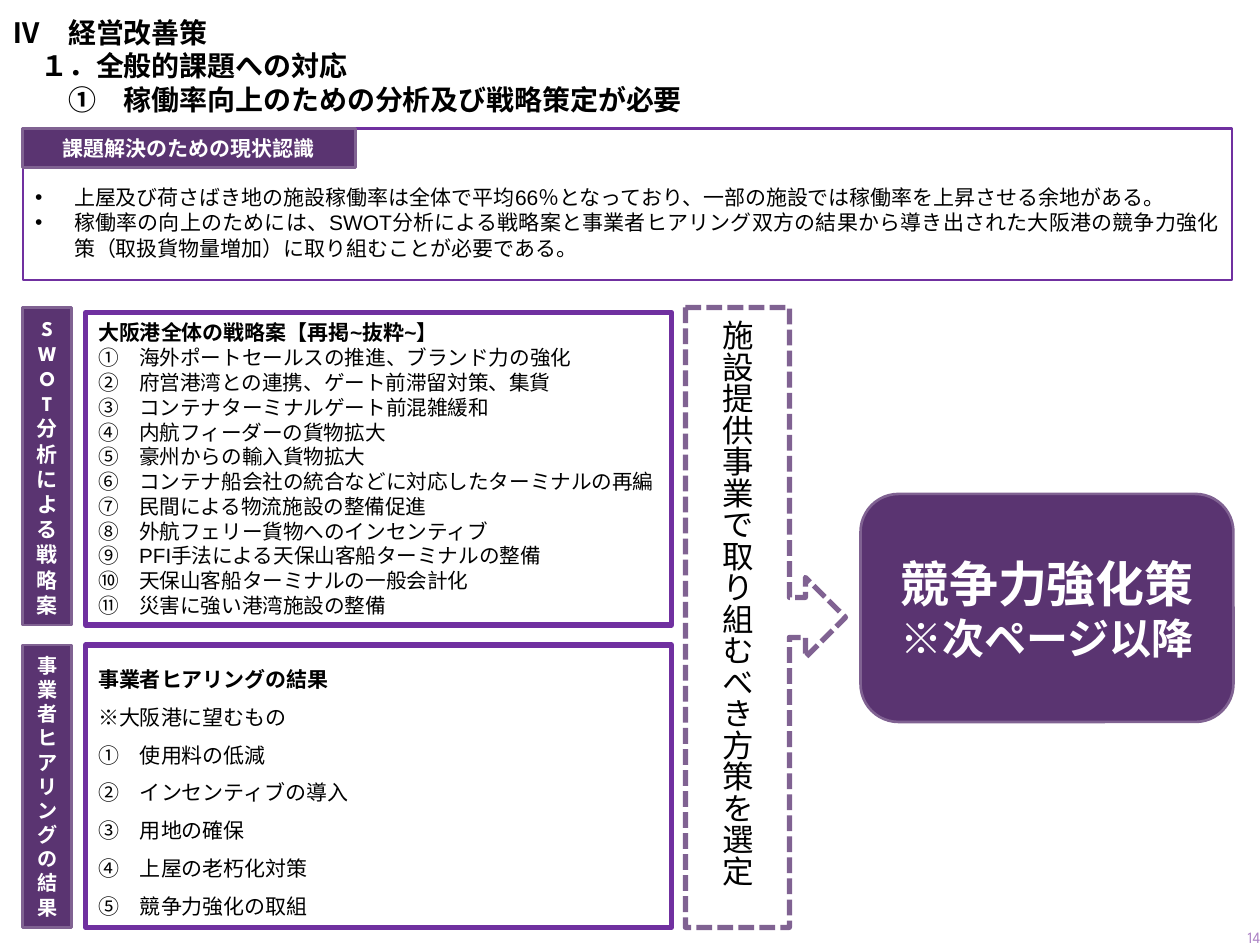
from lxml.etree import SubElement
from pptx import Presentation
from pptx.dml.color import RGBColor
from pptx.enum.dml import MSO_LINE
from pptx.enum.shapes import MSO_SHAPE
from pptx.enum.text import MSO_ANCHOR, PP_ALIGN
from pptx.oxml.ns import qn
from pptx.util import Inches, Pt

PURPLE, BORDER, FRAME = "5A3471", "806292", "7030A0"
BLACK, WHITE, PAGE_COLOR = "000000", "FFFFFF", "AD84C6"
BODY_FONT, LABEL_FONT = "Arial", "League Spartan"
NUMBERS = "①②③④⑤⑥⑦⑧⑨⑩⑪"

LEFT, LABEL_WIDTH = 0.18, 0.39
PANEL_LEFT, PANEL_WIDTH = 0.68, 4.65
HEARING_TOP, HEARING_HEIGHT = 5.12, 2.24

TITLE = ("Ⅳ　経営改善策\n"
         "　１．全般的課題への対応\n"
         "　　①　稼働率向上のための分析及び戦略策定が必要")
SITUATION = [
    "上屋及び荷さばき地の施設稼働率は全体で平均66％となっており、一部の施設では稼働率を上昇させる余地がある。",
    "稼働率の向上のためには、SWOT分析による戦略案と事業者ヒアリング双方の結果から導き出された"
    "大阪港の競争力強化策（取扱貨物量増加）に取り組むことが必要である。",
]
STRATEGIES = [
    "海外ポートセールスの推進、ブランド力の強化",
    "府営港湾との連携、ゲート前滞留対策、集貨",
    "コンテナターミナルゲート前混雑緩和",
    "内航フィーダーの貨物拡大",
    "豪州からの輸入貨物拡大",
    "コンテナ船会社の統合などに対応したターミナルの再編",
    "民間による物流施設の整備促進",
    "外航フェリー貨物へのインセンティブ",
    "PFI手法による天保山客船ターミナルの整備",
    "天保山客船ターミナルの一般会計化",
    "災害に強い港湾施設の整備",
]
REQUESTS = ["使用料の低減", "インセンティブの導入", "用地の確保", "上屋の老朽化対策", "競争力強化の取組"]


def color(hex_string):
    return RGBColor.from_string(hex_string)


def numbered(items):
    return [f"{number}　{item}" for number, item in zip(NUMBERS, items)]


def add_box(slide, kind, left, top, width, height, fill=None, line=BORDER, weight=1.5):
    box = slide.shapes.add_shape(kind, Inches(left), Inches(top), Inches(width), Inches(height))
    box.shadow.inherit = False
    if fill:
        box.fill.solid()
        box.fill.fore_color.rgb = color(fill)
    else:
        box.fill.background()
    box.line.color.rgb = color(line)
    box.line.width = Pt(weight)
    box.text_frame.word_wrap = True
    box.text_frame.vertical_anchor = MSO_ANCHOR.MIDDLE
    return box


def write(frame, lines, size, font=BODY_FONT, ink=BLACK, bold=False,
          align=PP_ALIGN.JUSTIFY, spacing=None):
    """Fill the frame with one paragraph per line and return the paragraphs."""
    for index, line in enumerate(lines):
        paragraph = frame.add_paragraph() if index else frame.paragraphs[0]
        paragraph.text = line
        paragraph.alignment = align
        paragraph.line_spacing = spacing
        paragraph.font.name = font
        paragraph.font.size = Pt(size)
        paragraph.font.bold = bold
        paragraph.font.color.rgb = color(ink)
    return frame.paragraphs


def add_bullet(paragraph, indent):
    properties = paragraph._p.get_or_add_pPr()
    properties.set("marL", str(Inches(indent)))
    properties.set("indent", str(-Inches(indent)))
    SubElement(properties, qn("a:buFont"), typeface="Arial")
    SubElement(properties, qn("a:buChar"), char="•")


def add_text(slide, left, top, width, height, line, size, anchor, **style):
    frame = slide.shapes.add_textbox(
        Inches(left), Inches(top), Inches(width), Inches(height)).text_frame
    frame.word_wrap = True
    frame.vertical_anchor = anchor
    write(frame, [line], size, **style)


def add_label(slide, left, top, width, height, text, size, kind=MSO_SHAPE.RECTANGLE):
    label = add_box(slide, kind, left, top, width, height, fill=PURPLE)
    return write(label.text_frame, text.split("\n"), size, LABEL_FONT, WHITE,
                 bold=True, align=PP_ALIGN.CENTER)


def add_panel(slide, top, height, heading, items, size, spacing=None):
    panel = add_box(slide, MSO_SHAPE.RECTANGLE, PANEL_LEFT, top, PANEL_WIDTH, height,
                    line=FRAME, weight=3)
    paragraphs = write(panel.text_frame, [heading] + items, size, spacing=spacing)
    paragraphs[0].font.size = Pt(12)
    paragraphs[0].font.bold = True


def add_situation(slide):
    situation = add_box(slide, MSO_SHAPE.RECTANGLE, LEFT, 1.02, 9.6, 1.2, line=FRAME, weight=1.25)
    # Keep the text clear of the heading tab
    situation.text_frame.margin_top = Inches(0.34)
    for paragraph in write(situation.text_frame, SITUATION, 12):
        add_bullet(paragraph, 0.31)
    add_label(slide, LEFT, 1.02, 2.64, 0.31, "課題解決のための現状認識", 12)


def add_selection_arrow(slide):
    arrow = add_box(slide, MSO_SHAPE.RIGHT_ARROW_CALLOUT, 5.44, 2.44, 1.27, 4.92, weight=3)
    arrow.line.dash_style = MSO_LINE.SQUARE_DOT
    arrow.text_frame._txBody.bodyPr.set("vert", "eaVert")
    write(arrow.text_frame, ["施設提供事業で取り組むべき方策を選定"], 18, LABEL_FONT,
          align=PP_ALIGN.CENTER)


def main():
    presentation = Presentation()
    presentation.slide_width, presentation.slide_height = Inches(10), Inches(7.5)
    slide = presentation.slides.add_slide(presentation.slide_layouts[6])

    # Title and current situation
    add_text(slide, 0, 0.07, 8.62, 1.11, TITLE, 16, MSO_ANCHOR.TOP,
             bold=True, align=PP_ALIGN.LEFT)
    add_situation(slide)

    # SWOT strategies
    add_label(slide, LEFT, 2.44, LABEL_WIDTH, 2.52, "SWOT分析による戦略案", 12)
    add_panel(slide, 2.48, 2.48, "大阪港全体の戦略案【再掲~抜粋~】", numbered(STRATEGIES), 11.8)

    # Hearing results
    add_label(slide, LEFT, HEARING_TOP, LABEL_WIDTH, HEARING_HEIGHT,
              "事業者ヒアリングの結果", 11.5)
    add_panel(slide, HEARING_TOP, HEARING_HEIGHT, "事業者ヒアリングの結果",
              ["※大阪港に望むもの"] + numbered(REQUESTS), 12, spacing=1.5)

    # Selection leading to the measures
    add_selection_arrow(slide)
    measures = add_label(slide, 6.83, 3.92, 2.96, 1.81, "競争力強化策\n※次ページ以降", 28,
                         MSO_SHAPE.ROUNDED_RECTANGLE)
    measures[1].font.size = Pt(24)

    # Page number
    add_text(slide, 9.54, 7.24, 0.56, 0.4, "14", 9, MSO_ANCHOR.MIDDLE,
             font=LABEL_FONT, ink=PAGE_COLOR, align=PP_ALIGN.RIGHT)

    presentation.save("out.pptx")


if __name__ == "__main__":
    main()
